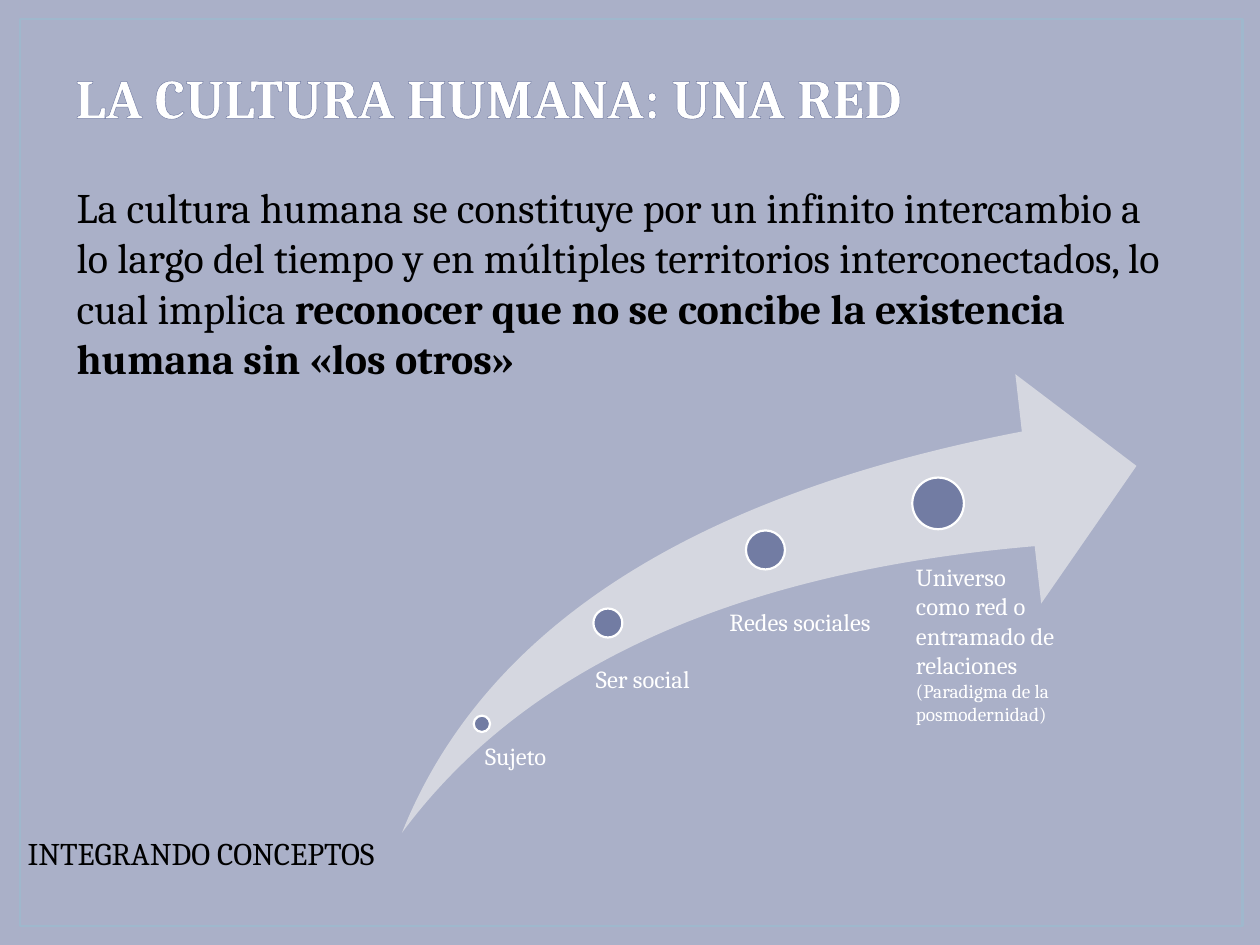
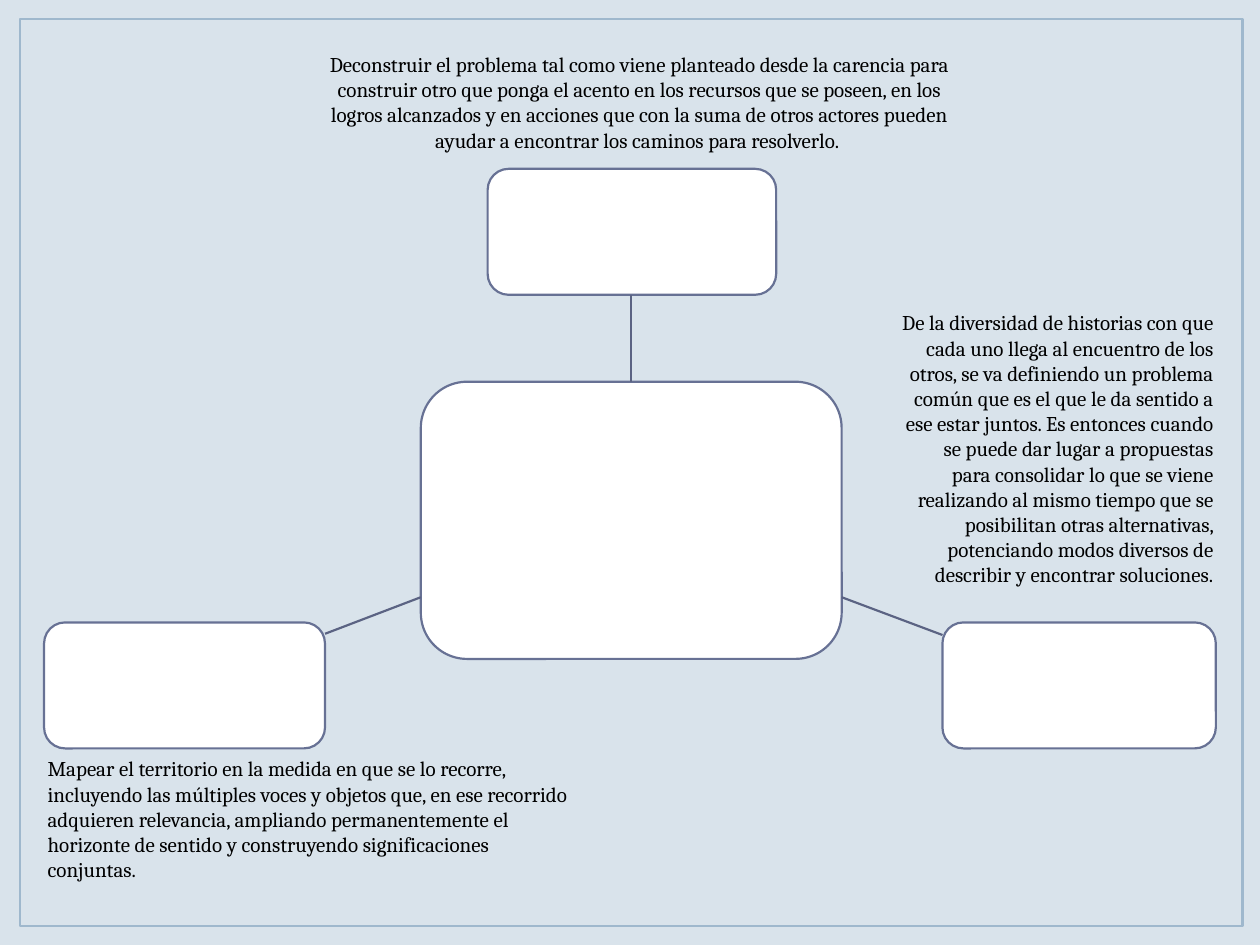
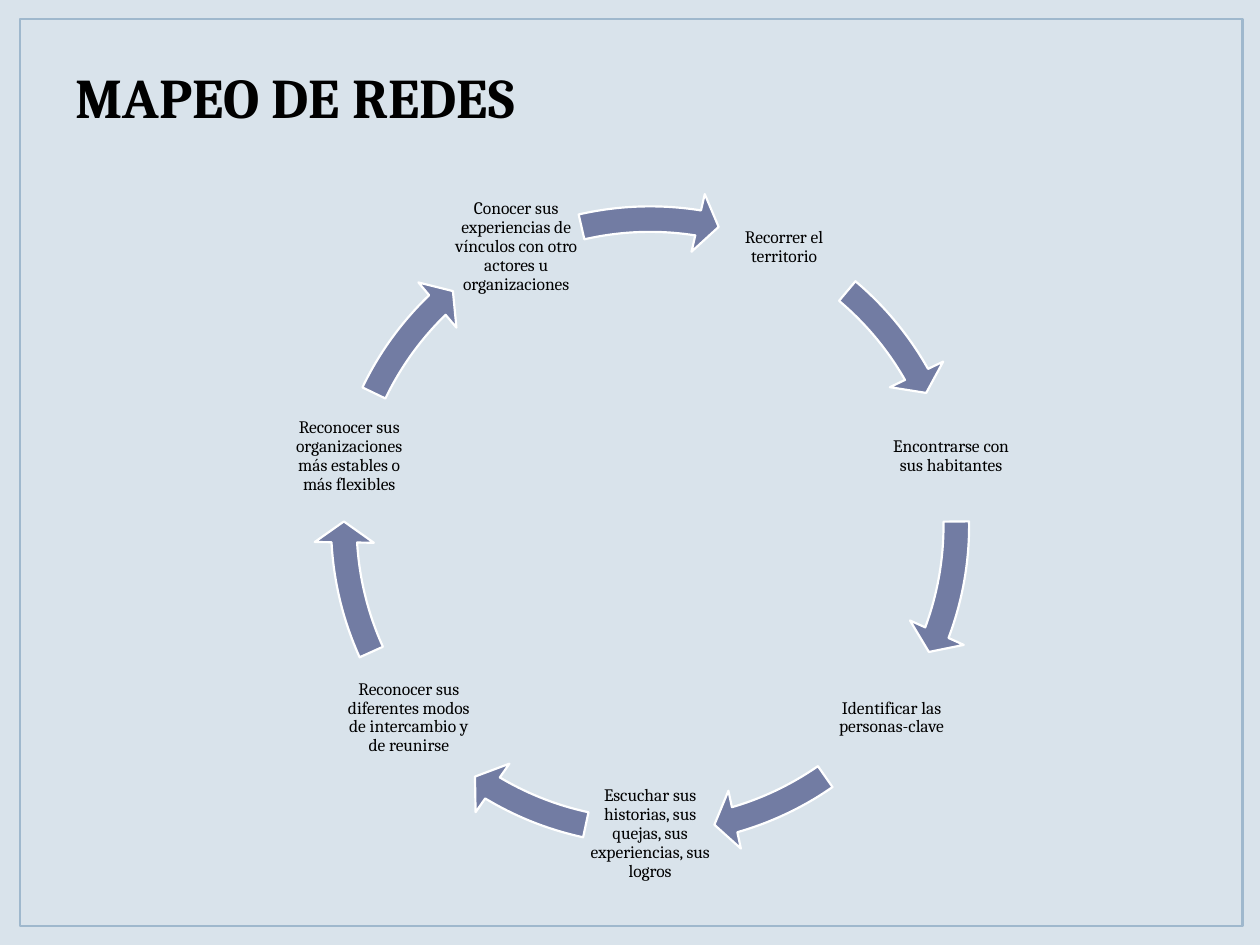
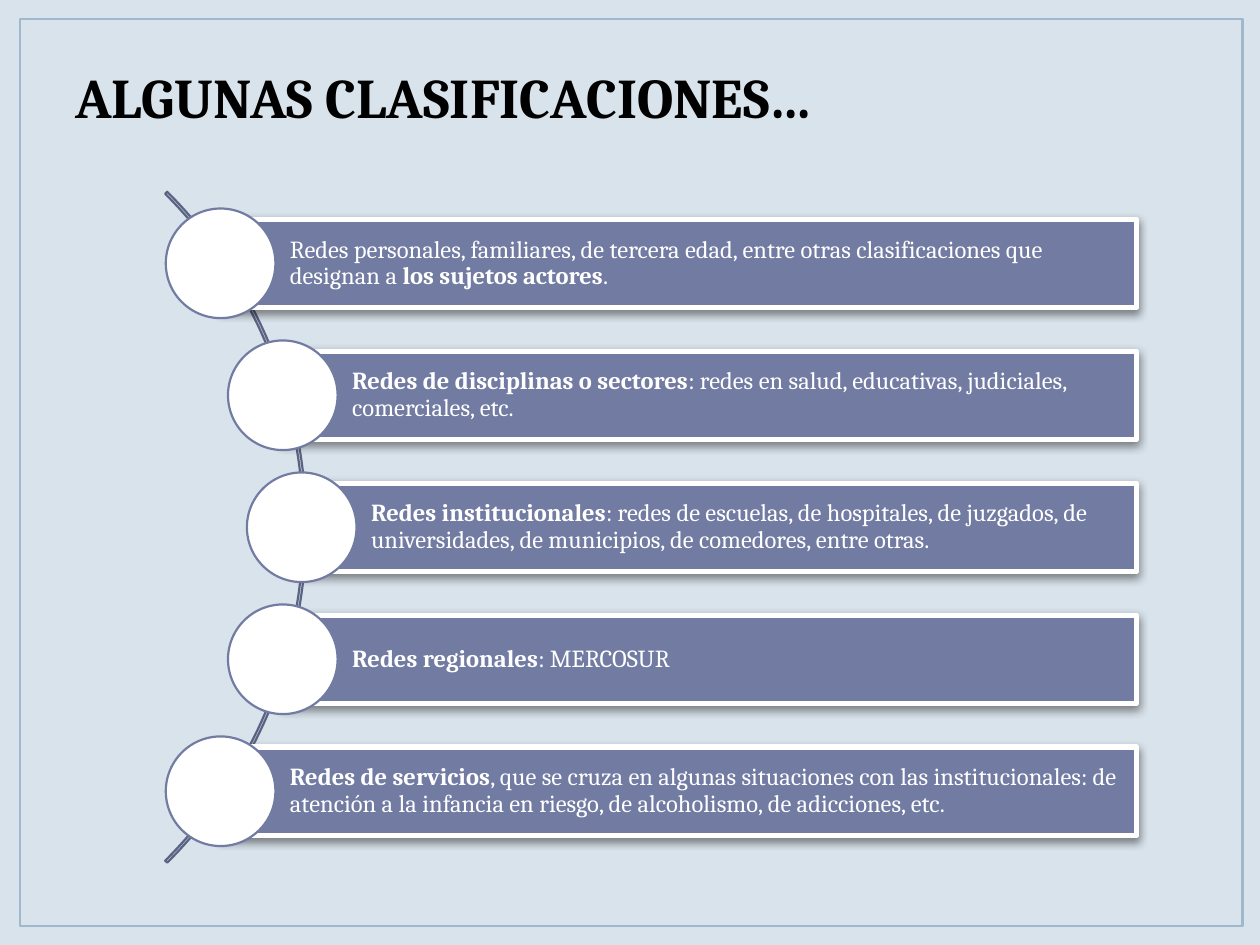
import math
from dataclasses import dataclass

from lxml import etree
from pptx import Presentation
from pptx.dml.color import RGBColor
from pptx.enum.shapes import MSO_CONNECTOR, MSO_SHAPE
from pptx.enum.text import MSO_ANCHOR, PP_ALIGN
from pptx.oxml.ns import qn
from pptx.util import Inches, Pt

RECT, ROUND, OVAL = MSO_SHAPE.RECTANGLE, MSO_SHAPE.ROUNDED_RECTANGLE, MSO_SHAPE.OVAL
SWOOSH, CIRCULAR, ARC = MSO_SHAPE.SWOOSH_ARROW, MSO_SHAPE.CIRCULAR_ARROW, MSO_SHAPE.BLOCK_ARC
STRAIGHT = MSO_CONNECTOR.STRAIGHT
LEFT, CENTER, RIGHT = PP_ALIGN.LEFT, PP_ALIGN.CENTER, PP_ALIGN.RIGHT
TOP, MIDDLE, BOTTOM = MSO_ANCHOR.TOP, MSO_ANCHOR.MIDDLE, MSO_ANCHOR.BOTTOM


@dataclass(frozen=True)
class Theme:
    font: str = "Cambria"
    paper: str = "D9E3EB"
    dusk: str = "AAB0C8"
    frame: str = "9FB8CD"
    accent: str = "727CA3"
    box_line: str = "677194"
    link: str = "5B6383"
    swoosh: str = "D5D7E0"
    white: str = "FFFFFF"
    black: str = "000000"
    title: int = 32
    lead: int = 24
    caption: int = 18
    label: int = 14
    note: int = 12
    small: int = 11
    step: int = 10
    thin: float = 1.25
    frame_width: float = 1.5
    bar_width: float = 3
    outline: float = 0.8


T = Theme()

CULTURE = {
    "title": "LA CULTURA HUMANA: UNA RED",
    "lead": "La cultura humana se constituye por un infinito intercambio a lo largo del tiempo y en "
            "múltiples territorios interconectados, lo cual implica **reconocer que no se concibe "
            "la existencia humana sin «los otros»**",
    "caption": "INTEGRANDO CONCEPTOS",
}
MILESTONES = [
    ((3.76, 5.68, 0.13), (3.78, 5.91, 1.3, 0.87), 0.07, 0.9, ["Sujeto"]),
    ((4.71, 4.83, 0.23), (4.61, 5.3, 1.6, 0.49), 0.12, 0.9, ["Ser social"]),
    ((5.92, 4.21, 0.31), (5.63, 4.84, 1.6, 0.72), 0.16, 0.9, ["Redes sociales"]),
    ((7.24, 3.79, 0.41), (7.05, 4.46, 1.87, 1.89), 0.22, None,
     ["Universo", "como red o entramado de relaciones",
      ("(Paradigma de la posmodernidad)", T.small)]),
]

HUB_BOXES = [
    (3.34, 3.03, 3.34, 2.2), (3.87, 1.34, 2.29, 1),
    (7.48, 4.94, 2.17, 1), (0.35, 4.94, 2.23, 1),
]
HUB_LINKS = [(5.01, 3.03, 5.01, 2.34), (6.68, 4.74, 7.48, 5.04), (3.34, 4.74, 2.58, 5.03)]
HUB_NOTES = [
    ((2.4, 0.36, 5.35, 0.91), CENTER,
     "Deconstruir el problema tal como viene planteado desde la carencia para construir otro que "
     "ponga el acento en los recursos que se poseen, en los logros alcanzados y en acciones que "
     "con la suma de otros actores pueden ayudar a encontrar los caminos para resolverlo. "),
    ((0.28, 5.95, 4.33, 1.11), LEFT,
     "Mapear el territorio en la medida en que se lo recorre, incluyendo las múltiples voces y "
     "objetos que, en ese recorrido adquieren relevancia, ampliando permanentemente el horizonte "
     "de sentido y construyendo significaciones conjuntas."),
    ((7.05, 2.41, 2.68, 2.52), RIGHT,
     "De la diversidad de historias con que cada uno llega al encuentro de los otros, se va "
     "definiendo un problema común que es el que le da sentido a ese estar juntos. Es entonces "
     "cuando se puede dar lugar a propuestas para consolidar lo que se viene realizando al mismo "
     "tiempo que se posibilitan otras alternativas, potenciando modos diversos de describir y "
     "encontrar soluciones."),
]

MAPPING_TITLE = "MAPEO DE REDES"
STEPS = [
    ("Recorrer el territorio", 198.28, 186.05),
    ("Encontrarse con sus habitantes", 12.31, 215.57),
    ("Identificar las personas-clave", 44.38, 33.07),
    ("Escuchar sus historias, sus quejas, sus experiencias, sus logros", 72.58, 61.27),
    ("Reconocer sus diferentes modos de intercambio y de reunirse", 106.09, 93.34),
    ("Reconocer sus organizaciones más estables o más flexibles", 135.61, 123.37),
    ("Conocer sus experiencias de vínculos con otro actores u organizaciones", 167.42, 154.24),
]

CLASSES_TITLE = "ALGUNAS CLASIFICACIONES…"
CLASSES = [
    "Redes personales, familiares, de tercera edad, entre otras clasificaciones que designan a "
    "**los sujetos actores**.",
    "**Redes de disciplinas o sectores**: redes en salud, educativas, judiciales, comerciales, etc.",
    "**Redes institucionales**: redes de escuelas, de hospitales, de juzgados, de universidades, "
    "de municipios, de comedores, entre otras.",
    "**Redes regionales**: MERCOSUR",
    "**Redes de servicios**, que se cruza en algunas situaciones con las institucionales: de "
    "atención a la infancia en riesgo, de alcoholismo, de adicciones, etc.",
]


def rgb(color):
    return RGBColor.from_string(color)


def box(at):
    return [Inches(v) for v in at]


def add_solid(parent, color, alpha=None):
    fill = etree.SubElement(parent, qn("a:solidFill"))
    clr = etree.SubElement(fill, qn("a:srgbClr"), val=color)
    if alpha:
        etree.SubElement(clr, qn("a:alpha"), val=str(alpha * 1000))


def write(sp, paragraphs, size=T.label, color=T.black, align=LEFT, anchor=TOP,
          insets=(0.1, 0.05, 0.1, 0.05), spacing=None, bold=False, outline=None):
    tf = sp.text_frame
    tf.word_wrap = True
    tf.vertical_anchor = anchor
    tf.margin_left, tf.margin_top, tf.margin_right, tf.margin_bottom = box(insets)
    for i, item in enumerate(paragraphs):
        text, points = item if isinstance(item, tuple) else (item, size)
        p = tf.paragraphs[0] if i == 0 else tf.add_paragraph()
        p.alignment = align
        if spacing:
            p.line_spacing = spacing
        for j, part in enumerate(text.split("**")):
            if not part:
                continue
            r = p.add_run()
            r.text = part
            r.font.name, r.font.size = T.font, Pt(points)
            r.font.bold = bold or j % 2 == 1
            r.font.color.rgb = rgb(color)
            if outline:
                ln = etree.Element(qn("a:ln"), w=str(Pt(T.outline)))
                add_solid(ln, outline)
                r.font._element.insert(0, ln)


def add_text(s, at, paragraphs, **fmt):
    write(s.shapes.add_textbox(*box(at)), paragraphs, **fmt)


def add_shape(s, kind, at, fill=None, line=None, width=T.thin, adjust=()):
    sp = s.shapes.add_shape(kind, *box(at))
    sp.shadow.inherit = False
    for i, value in enumerate(adjust):
        sp.adjustments[i] = value
    if fill:
        sp.fill.solid()
        sp.fill.fore_color.rgb = rgb(fill)
    else:
        sp.fill.background()
    if line:
        sp.line.color.rgb = rgb(line)
        sp.line.width = Pt(width)
    else:
        sp.line.fill.background()
    return sp


def add_link(s, ends):
    cn = s.shapes.add_connector(STRAIGHT, *box(ends))
    cn.line.color.rgb = rgb(T.link)
    cn.line.width = Pt(T.thin)
    etree.SubElement(cn._element.spPr, qn("a:effectLst"))


def drop_shadow(sp):
    effects = sp._element.spPr.find(qn("a:effectLst"))
    shadow = etree.SubElement(effects, qn("a:outerShdw"), blurRad=str(Pt(5)), dist=str(Pt(2)),
                              dir="5400000", rotWithShape="0")
    add_solid(shadow, T.black)
    clr = shadow[0][0]
    shadow.replace(shadow[0], clr)
    etree.SubElement(clr, qn("a:alpha"), val="43000")


def new_slide(prs, title=None, background=T.paper, color=T.black):
    s = prs.slides.add_slide(prs.slide_layouts[6])
    s.background.fill.solid()
    s.background.fill.fore_color.rgb = rgb(background)
    add_shape(s, RECT, (0.16, 0.15, 9.7, 7.2), line=T.frame, width=T.frame_width)
    if title:
        add_text(s, (0.5, 0.29, 9, 0.79), [title], size=T.title, color=color, bold=True,
                 anchor=BOTTOM, outline=T.accent)
    return s


def culture_slide(prs):
    s = new_slide(prs, CULTURE["title"], T.dusk, T.white)
    add_text(s, (0.51, 1.39, 8.9, 2.12), [CULTURE["lead"]], size=T.lead)
    add_shape(s, SWOOSH, (3.19, 2.97, 5.83, 3.64), fill=T.swoosh, adjust=(0.25, 0.25))
    for (x, y, d), at, inset, spacing, paragraphs in MILESTONES:
        add_shape(s, OVAL, (x, y, d, d), fill=T.accent, line=T.white)
        add_text(s, at, paragraphs, color=T.white, insets=(inset, 0, 0, 0), spacing=spacing)
    add_text(s, (0.12, 6.57, 3.15, 0.4), [CULTURE["caption"]], size=T.caption)


def hub_slide(prs):
    s = new_slide(prs)
    for at in HUB_BOXES:
        add_shape(s, ROUND, at, fill=T.white, line=T.box_line)
    for ends in HUB_LINKS:
        add_link(s, ends)
    for at, align, text in HUB_NOTES:
        add_text(s, at, [text], size=T.note, align=align)


def mapping_slide(prs):
    s = new_slide(prs, MAPPING_TITLE)
    cx, cy, radius, side, ring = 5.16, 4.17, 2.45, 1.03, 5.33
    for i, (text, head, tail) in enumerate(STEPS):
        angle = (2 * i + 1) * math.pi / len(STEPS)
        x = cx + radius * math.sin(angle) - side / 2
        y = cy - radius * math.cos(angle) - side / 2
        add_text(s, (x, y, side, side), [text], size=T.step, align=CENTER, anchor=MIDDLE,
                 insets=(0.01,) * 4, spacing=0.9)
        add_shape(s, CIRCULAR, (cx - ring / 2, cy - ring / 2, ring, ring), fill=T.accent,
                  line=T.white, adjust=(0.038, 2.346, head, tail, 0.044))


def classes_slide(prs):
    s = new_slide(prs, CLASSES_TITLE)
    arc, cx, cy = 7.53, -1.335, 4.185
    add_shape(s, ARC, (cx - arc / 2, cy - arc / 2, arc, arc), line=T.link,
              adjust=(189, 27, 0.003))
    radius, pitch, height, dot, right = 3.73, 1.0475, 0.7, 0.87, 9.02
    for i, text in enumerate(CLASSES):
        dy = (i - (len(CLASSES) - 1) / 2) * pitch
        x, y = cx + math.sqrt(radius ** 2 - dy ** 2), cy + dy
        bar = add_shape(s, RECT, (x, y - height / 2, right - x, height), fill=T.accent,
                        line=T.white, width=T.bar_width)
        drop_shadow(bar)
        write(bar, [text], color=T.white, anchor=MIDDLE, insets=(0.55, 0.04, 0.04, 0.04),
              spacing=0.9)
        add_shape(s, OVAL, (x - dot / 2, y - dot / 2, dot, dot), fill=T.white, line=T.accent)


def main():
    prs = Presentation()
    prs.slide_width, prs.slide_height = Inches(10), Inches(7.5)
    for build in (culture_slide, hub_slide, mapping_slide, classes_slide):
        build(prs)
    prs.save("out.pptx")


if __name__ == "__main__":
    main()
